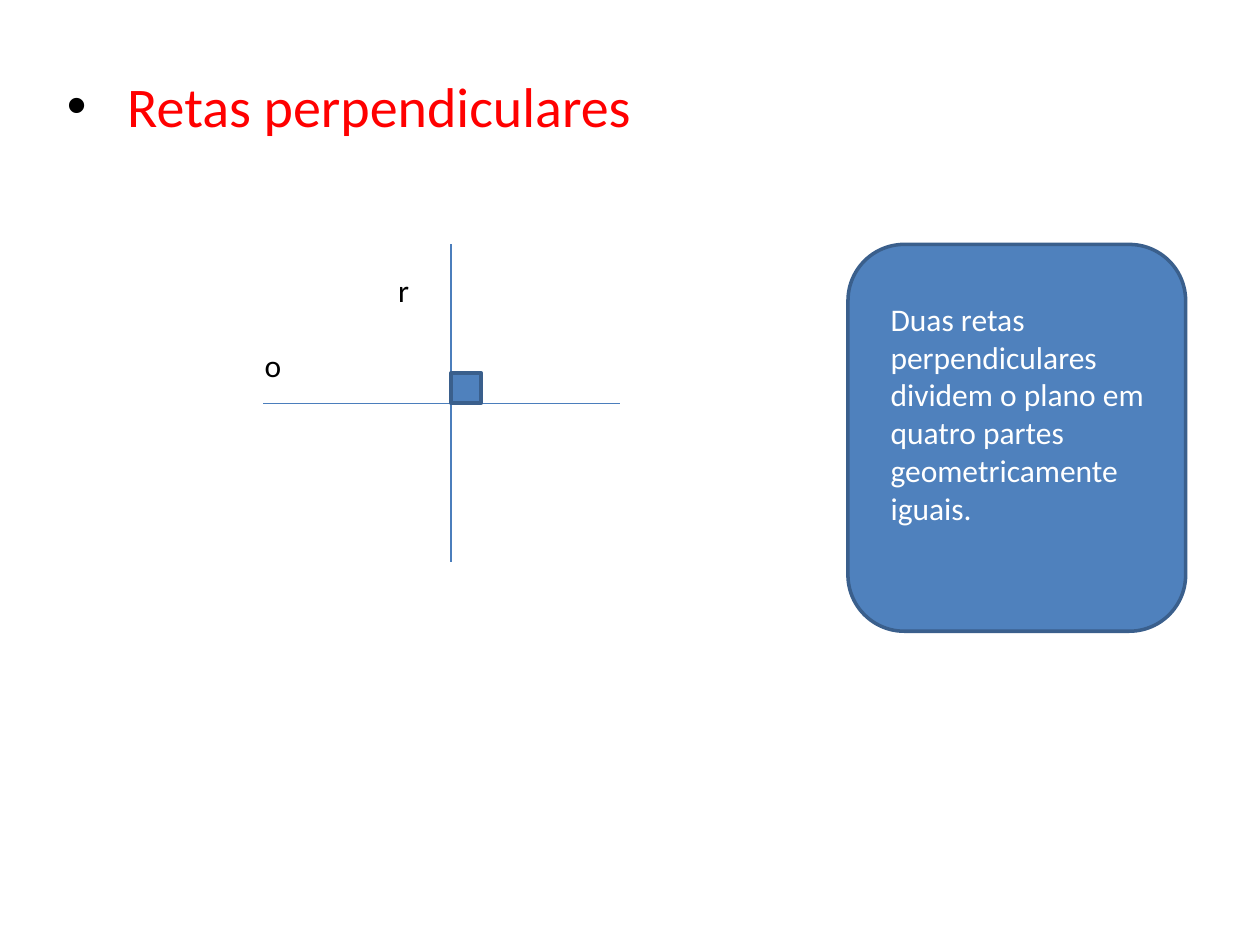
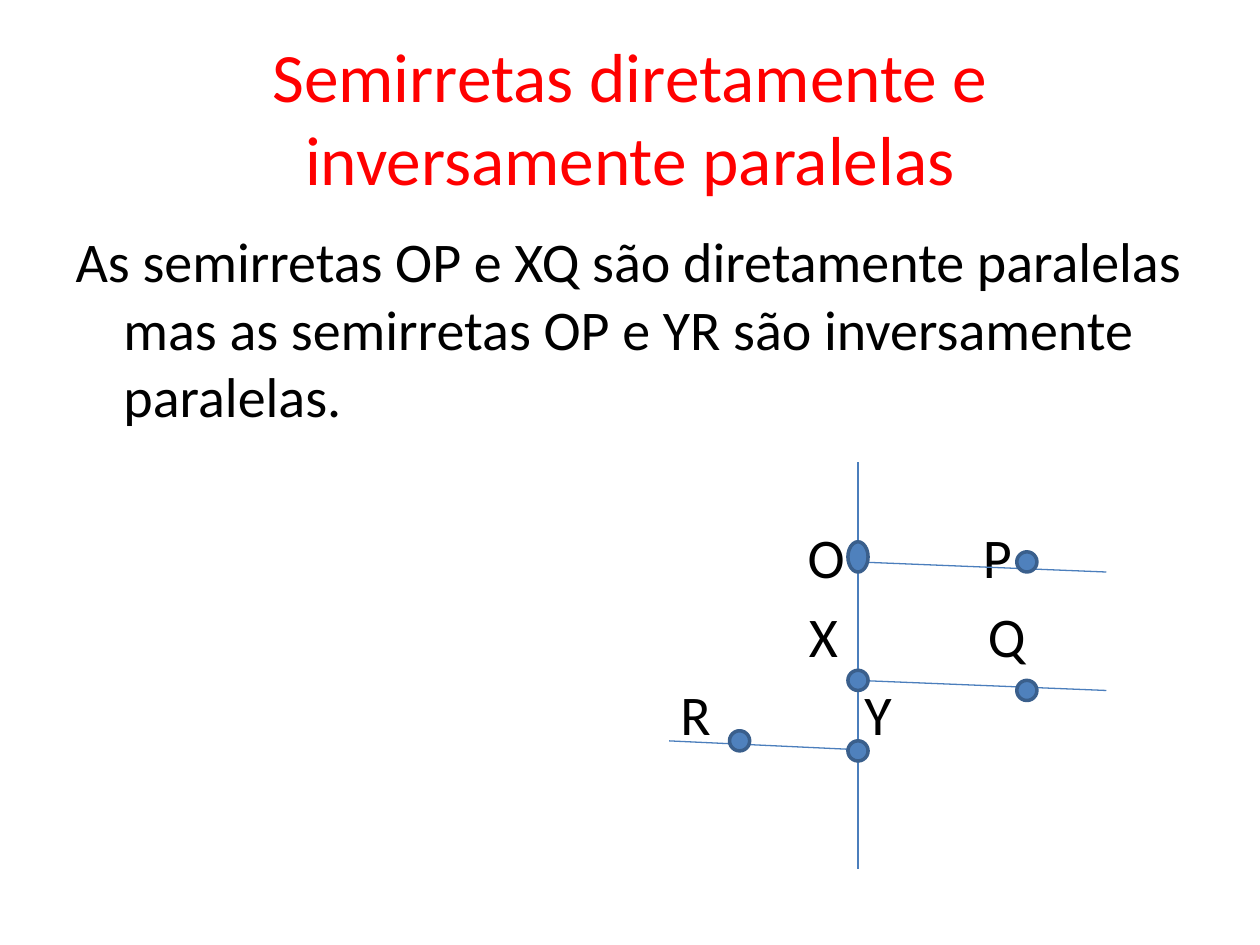
from lxml import etree
from pptx import Presentation
from pptx import util as u
from pptx.dml.color import RGBColor
from pptx.enum import shapes, text
from pptx.oxml.ns import qn

FONT = "Calibri"
RED, BLACK, WHITE = "FF0000", "000000", "FFFFFF"
FILL, EDGE, LINE = "4F81BD", "3A5F8C", "4B7EBC"

PERPENDICULAR = {
    "heading": "Retas perpendiculares",
    "note": "Duas retas perpendiculares dividem o plano em quatro partes geometricamente iguais.",
    "lines": [((3.58, 1.94), (3.58, 4.46)), ((2.09, 3.2), (4.92, 3.2))],
    "labels": [("r", 3.16, 2.15), ("o", 2.1, 2.75)],
    "angle": (3.58, 2.96, 0.24, 0.24),
    "card": (6.73, 1.94, 2.68, 3.07),
}

AXIS = 6.81
PARALLEL = {
    "title": "Semirretas diretamente e inversamente paralelas",
    "body": "As semirretas OP e XQ são diretamente paralelas mas as semirretas OP e YR são inversamente paralelas.",
    "lines": [
        ((AXIS, 3.67), (AXIS, 6.9)),
        ((AXIS, 4.46), (8.78, 4.54)),
        ((AXIS, 5.4), (8.78, 5.48)),
        ((AXIS, 5.95), (5.31, 5.88)),
    ],
    "label_rows": [
        [("O", 6.41), ("P", 7.8)],
        [("X", 6.42), ("Q", 7.84)],
        [("R", 5.4), ("Y", 6.86)],
    ],
    "points": [
        (5.87, 5.88, 0.16), (8.15, 5.48, 0.16), (8.15, 4.46, 0.16),
        (AXIS, 4.42, 0.24), (AXIS, 5.4, 0.16), (AXIS, 5.96, 0.16),
    ],
}
LABEL_TOP, LABEL_STEP = 4.15, 0.62
POINT_WIDTH = 0.16


def color(value):
    return RGBColor.from_string(value)


def place(shape, *bounds):
    shape.left, shape.top, shape.width, shape.height = map(u.Inches, bounds)


def write(frame, words, size=18, ink=BLACK, align=None, anchor=None, margin=None):
    frame.word_wrap = True
    frame.auto_size = text.MSO_AUTO_SIZE.NONE
    if anchor is not None:
        frame.vertical_anchor = anchor
    if margin is not None:
        frame.margin_left = frame.margin_right = u.Inches(margin)
        frame.margin_top = frame.margin_bottom = u.Inches(margin)
    para = frame.paragraphs[0]
    if align is not None:
        para.alignment = align
    span = para.add_run()
    span.text = words
    span.font.name = FONT
    span.font.size = u.Pt(size)
    span.font.color.rgb = color(ink)
    return para


def set_bullet(para, indent, symbol=None):
    props = para._p.get_or_add_pPr()
    props.set("marL", str(u.Inches(indent)))
    props.set("indent", str(-u.Inches(indent)))
    if symbol is None:
        etree.SubElement(props, qn("a:buNone"))
        return
    tint = etree.SubElement(props, qn("a:buClr"))
    etree.SubElement(tint, qn("a:srgbClr"), val=BLACK)
    etree.SubElement(props, qn("a:buFont"), typeface="Arial")
    etree.SubElement(props, qn("a:buChar"), char=symbol)


def add_label(page, words, left, top, size):
    box = page.shapes.add_textbox(*map(u.Inches, (left, top, 0.45, size / 60)))
    write(box.text_frame, words, size=size, margin=0)


def add_line(page, start, end):
    line = page.shapes.add_connector(
        shapes.MSO_CONNECTOR.STRAIGHT, *map(u.Inches, start + end))
    line.line.color.rgb = color(LINE)
    line.line.width = u.Pt(0.75)
    etree.SubElement(line._element.spPr, qn("a:effectLst"))


def add_figure(page, kind, *bounds):
    figure = page.shapes.add_shape(kind, *map(u.Inches, bounds))
    figure.shadow.inherit = False
    figure.fill.solid()
    figure.fill.fore_color.rgb = color(FILL)
    figure.line.color.rgb = color(EDGE)
    figure.line.width = u.Pt(2)


def add_page(deck):
    page = deck.slides.add_slide(deck.slide_layouts[1])
    return page, page.shapes.title, page.placeholders[1]


def build_perpendicular(deck):
    content = PERPENDICULAR
    page, title, body = add_page(deck)
    title._element.getparent().remove(title._element)
    place(body, 0.43, 0.52, 9, 4.95)
    para = write(body.text_frame, content["heading"], size=32, ink=RED)
    set_bullet(para, 0.48, "•")
    for start, end in content["lines"]:
        add_line(page, start, end)
    add_figure(page, shapes.MSO_SHAPE.RECTANGLE, *content["angle"])
    add_figure(page, shapes.MSO_SHAPE.ROUNDED_RECTANGLE, *content["card"])
    note = page.shapes.add_textbox(*map(u.Inches, (6.97, 2.33, 2.36, 1.92)))
    write(note.text_frame, content["note"], ink=WHITE)
    for words, left, top in content["labels"]:
        add_label(page, words, left, top, 18)


def build_parallel(deck):
    content = PARALLEL
    page, title, body = add_page(deck)
    place(title, 0.5, 0.3, 9, 1.25)
    write(title.text_frame, content["title"], size=39.6, ink=RED,
          align=text.PP_ALIGN.CENTER, anchor=text.MSO_ANCHOR.MIDDLE)
    place(body, 0.5, 1.75, 9, 4.95)
    set_bullet(write(body.text_frame, content["body"], size=32), 0.38)
    for row, labels in enumerate(content["label_rows"]):
        for words, left in labels:
            add_label(page, words, left, LABEL_TOP + row * LABEL_STEP, 32)
    for start, end in content["lines"]:
        add_line(page, start, end)
    for x, y, height in content["points"]:
        add_figure(page, shapes.MSO_SHAPE.OVAL,
                   x - POINT_WIDTH / 2, y - height / 2, POINT_WIDTH, height)


def main():
    deck = Presentation()
    deck.slide_width, deck.slide_height = u.Inches(10), u.Inches(7.5)
    build_perpendicular(deck)
    build_parallel(deck)
    deck.save("out.pptx")


if __name__ == "__main__":
    main()
